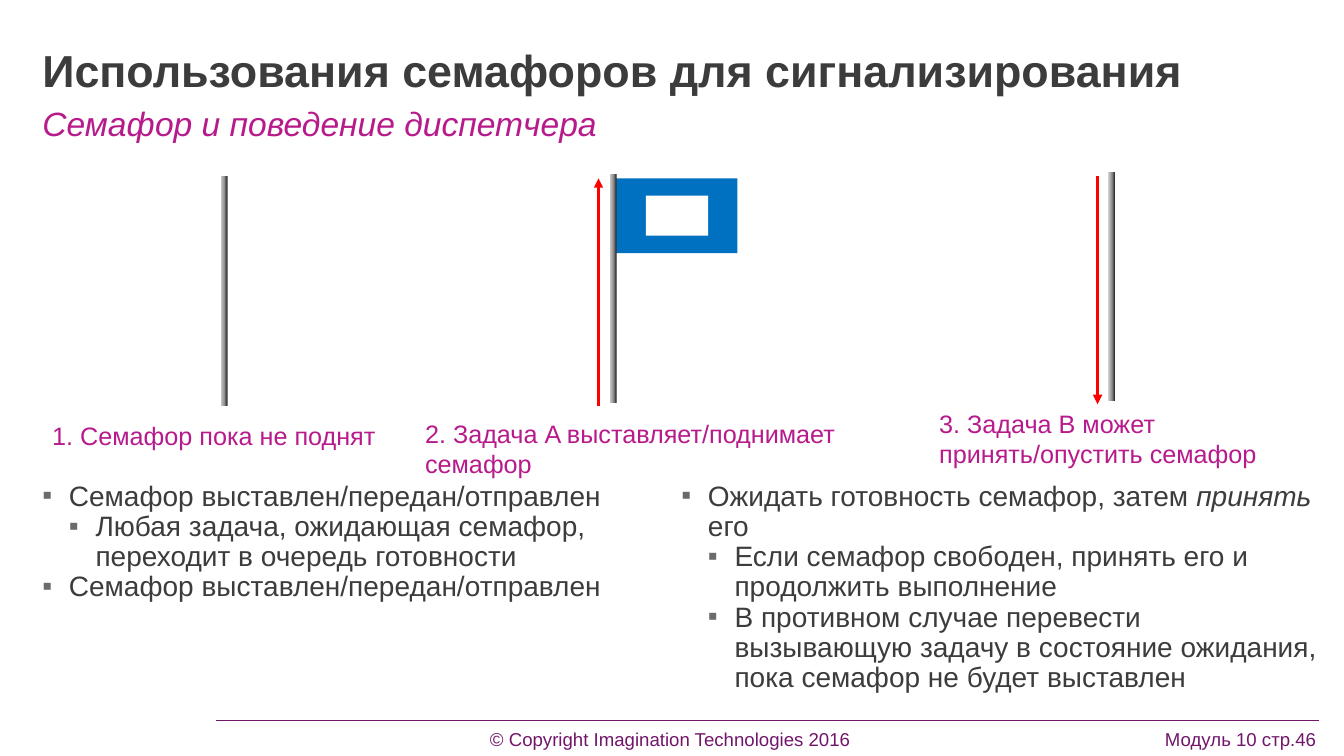
from typing import NamedTuple

from lxml import etree
from pptx import Presentation
from pptx.dml.color import RGBColor
from pptx.enum.shapes import MSO_CONNECTOR, MSO_SHAPE
from pptx.enum.text import MSO_ANCHOR
from pptx.oxml.ns import qn
from pptx.util import Pt

RECT = MSO_SHAPE.RECTANGLE
STRAIGHT = MSO_CONNECTOR.STRAIGHT
TOP, BOTTOM = MSO_ANCHOR.TOP, MSO_ANCHOR.BOTTOM

WHITE = RGBColor(0xFF, 0xFF, 0xFF)
DARK = RGBColor(0x3C, 0x3C, 0x3C)
MAGENTA = RGBColor(0xB7, 0x1A, 0x8B)
PURPLE = RGBColor(0x72, 0x16, 0x6B)
BLUE = RGBColor(0x00, 0x70, 0xC0)
RED = RGBColor(0xFF, 0x00, 0x00)
GRAY = RGBColor(0x6B, 0x6B, 0x6B)
POLE_STOPS = ((0, "CECECE"), (59, "8E8E8E"), (97, "333333"))

FONT = "Arial"
MARGIN = 30.24
CONTENT_W = 912.96
COLUMN_W = CONTENT_W / 2
POLE_W, POLE_H = 4.6, 164.2


class Label(NamedTuple):
    text: str
    x: float
    y: float
    w: float
    h: float
    size: float
    color: RGBColor
    bold: bool = False
    italic: bool = False
    inset_x: float = 0
    inset_y: float = 0
    spacing: float = 1
    anchor: MSO_ANCHOR = TOP


class Bullet(NamedTuple):
    level: int
    texts: tuple[str, ...]  # every second text is italic


class Arrow(NamedTuple):
    x: float
    start: float
    end: float


def caption(text: str, x: float, y: float, w: float, h: float) -> Label:
    return Label(text, x, y, w, h, 18, MAGENTA, inset_x=7.2, inset_y=3.6)


LABELS = (
    Label("Использования семафоров для сигнализирования", MARGIN, 35.3, CONTENT_W, 33.8,
          32, DARK, bold=True, spacing=0.85, anchor=BOTTOM),
    Label("Семафор и поведение диспетчера", MARGIN, 73.4, CONTENT_W, 22.3,
          24, MAGENTA, italic=True),
    caption("1. Семафор пока не поднят", 30.2, 296.6, 267.1, 28.1),
    caption("2. Задача A выставляет/поднимает семафор", 296.6, 295.2, 345.6, 49.7),
    caption("3. Задача B может принять/опустить семафор", 663.8, 288, 287.3, 49.7),
)
SIGNALLED = Bullet(0, ("Семафор выставлен/передан/отправлен",))
COLUMNS = (
    (SIGNALLED,
     Bullet(1, ("Любая задача, ожидающая семафор, переходит в очередь готовности",)),
     SIGNALLED),
    (Bullet(0, ("Ожидать готовность семафор, затем ", "принять", " его")),
     Bullet(1, ("Если семафор свободен, принять его и продолжить выполнение",)),
     Bullet(1, ("В противном случае перевести вызывающую задачу в состояние ожидания, "
                "пока семафор не будет выставлен",))),
)
POLES = ((157.7, 125.6), (435.6, 124), (791.7, 122.6))
ARROWS = (Arrow(427.5, 290.2, 127.4), Arrow(784, 126, 288.7))


def add_box(s, x: float, y: float, w: float, h: float, inset_x: float = 0, inset_y: float = 0):
    tf = s.shapes.add_textbox(Pt(x), Pt(y), Pt(w), Pt(h)).text_frame
    tf.word_wrap = True
    tf.margin_left = tf.margin_right = Pt(inset_x)
    tf.margin_top = tf.margin_bottom = Pt(inset_y)
    return tf


def style(font, size: float, color: RGBColor, bold: bool = False, italic: bool = False) -> None:
    font.name, font.size, font.bold, font.italic = FONT, Pt(size), bold, italic
    font.color.rgb = color


def add_label(s, label: Label) -> None:
    tf = add_box(s, label.x, label.y, label.w, label.h, label.inset_x, label.inset_y)
    tf.vertical_anchor = label.anchor
    p = tf.paragraphs[0]
    p.text = label.text
    p.line_spacing = label.spacing
    style(p.runs[0].font, label.size, label.color, label.bold, label.italic)


def add_bullets(s, x: float, bullets: tuple[Bullet, ...]) -> None:
    tf = add_box(s, x, 344.2, COLUMN_W, 172)
    for i, bullet in enumerate(bullets):
        p = tf.add_paragraph() if i else tf.paragraphs[0]
        p.line_spacing = 0.9
        p.level = bullet.level
        pPr = p._p.get_or_add_pPr()
        pPr.set("marL", str(Pt(19 * (bullet.level + 1))))
        pPr.set("indent", str(-Pt(19)))
        color = etree.SubElement(pPr, qn("a:buClr"))
        etree.SubElement(color, qn("a:srgbClr"), val=str(GRAY))
        etree.SubElement(pPr, qn("a:buFont"), typeface=FONT)
        etree.SubElement(pPr, qn("a:buChar"), char="▪")
        for j, text in enumerate(bullet.texts):
            r = p.add_run()
            r.text = text
            style(r.font, 20, DARK, italic=j % 2 == 1)


def add_rect(s, x: float, y: float, w: float, h: float):
    sp = s.shapes.add_shape(RECT, Pt(x), Pt(y), Pt(w), Pt(h))
    sp.shadow.inherit = False
    sp.line.fill.background()
    return sp


def add_flag(s) -> None:
    for color, box in ((BLUE, (439.9, 127.4, 86.8, 53.5)), (WHITE, (461.3, 139.8, 44.5, 28.6))):
        sp = add_rect(s, *box)
        sp.fill.solid()
        sp.fill.fore_color.rgb = color


def add_pole(s, x: float, y: float) -> None:
    sp = add_rect(s, x, y, POLE_W, POLE_H)
    sp.fill.gradient()
    sp.fill.gradient_angle = 0
    stops = sp._element.spPr.find(qn("a:gradFill")).find(qn("a:gsLst"))
    for stop in list(stops):
        stops.remove(stop)
    for percent, color in POLE_STOPS:
        stop = etree.SubElement(stops, qn("a:gs"), pos=str(percent * 1000))
        etree.SubElement(stop, qn("a:srgbClr"), val=color)


def add_line(s, x1: float, y1: float, x2: float, y2: float, color: RGBColor, width: float):
    line = s.shapes.add_connector(STRAIGHT, Pt(x1), Pt(y1), Pt(x2), Pt(y2))
    line.line.color.rgb = color
    line.line.width = Pt(width)
    etree.SubElement(line._element.spPr, qn("a:effectLst"))
    return line


def add_arrow(s, arrow: Arrow) -> None:
    line = add_line(s, arrow.x, arrow.start, arrow.x, arrow.end, RED, 2.25)
    etree.SubElement(line._element.spPr.find(qn("a:ln")), qn("a:tailEnd"), type="triangle")


def add_footer(s) -> None:
    add_line(s, 154.1, 514.8, 942.5, 514.8, PURPLE, 0.5)
    p = add_box(s, 17.3, 522, 925.9, 14.4).paragraphs[0]
    p.text = "\t© Copyright Imagination Technologies 2016\t Модуль 10 стр.46"
    p.line_spacing = 0.9
    tabs = etree.SubElement(p._p.get_or_add_pPr(), qn("a:tabLst"))
    for position, align in ((461.5, "ctr"), (923, "r")):
        etree.SubElement(tabs, qn("a:tab"), pos=str(Pt(position)), algn=align)
    for r in p.runs:
        style(r.font, 13.3, PURPLE)


def main() -> None:
    prs = Presentation()
    prs.slide_width, prs.slide_height = Pt(960), Pt(540)
    s = prs.slides.add_slide(prs.slide_layouts[6])
    add_footer(s)
    add_flag(s)
    for x, y in POLES:
        add_pole(s, x, y)
    for arrow in ARROWS:
        add_arrow(s, arrow)
    for label in LABELS:
        add_label(s, label)
    for i, bullets in enumerate(COLUMNS):
        add_bullets(s, MARGIN + i * COLUMN_W, bullets)
    prs.save("out.pptx")


if __name__ == "__main__":
    main()
